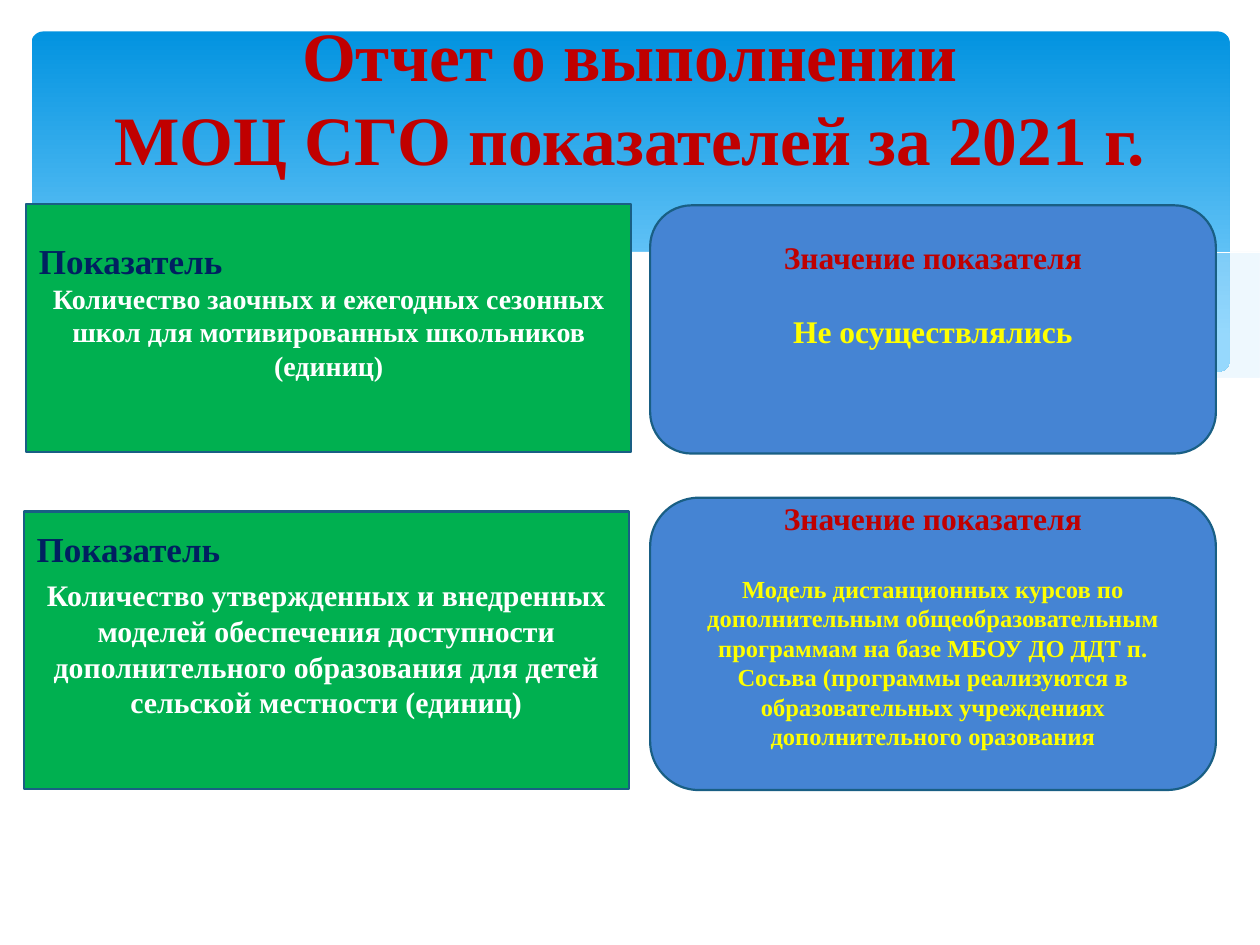
from pptx import Presentation
from pptx import util as u
from pptx.dml.color import RGBColor
from pptx.enum import shapes, text
from pptx.oxml.ns import qn

FONT = "Times New Roman"
COLORS = dict(sky="0293E0", pale="83D3FE", mist="C6E7FC", white="FFFFFF",
              red="C00000", navy="002060", yellow="FFFF00",
              green="00B050", blue="4584D3", edge="195F84")
TITLE = "Отчет о выполнении\vМОЦ СГО показателей за 2021 г."
LABEL, VALUE = "Показатель", "Значение показателя"
LEFT, CENTER = text.PP_ALIGN.LEFT, text.PP_ALIGN.CENTER
TOP, MIDDLE, BOTTOM = text.MSO_ANCHOR.TOP, text.MSO_ANCHOR.MIDDLE, text.MSO_ANCHOR.BOTTOM

# Each card: box, kind, anchor, (top, bottom) insets, heading size, body, body size, gap in points
CARDS = [
    ((0.21, 1.62, 4.8, 1.97), "indicator", TOP, (0.28, 0.05),
     "Количество заочных и ежегодных сезонных школ для мотивированных школьников (единиц)", 16, 0),
    ((5.16, 1.63, 4.49, 1.97), "value", TOP, (0.16, 0.05), "Не осуществлялись", 18, 21),
    ((5.16, 3.95, 4.49, 2.32), "value", BOTTOM, (0, 0.2),
     "Модель дистанционных курсов по дополнительным общеобразовательным программам "
     "на базе МБОУ ДО ДДТ п. Сосьва (программы реализуются в образовательных "
     "учреждениях дополнительного оразования", 14, 21),
    ((0.19, 4.06, 4.8, 2.2), "body", TOP, (0.13, 0.05),
     "Количество утвержденных и внедренных моделей обеспечения доступности "
     "дополнительного образования для детей сельской местности (единиц)", 17, 4),
]
# Each wave: smooth edges (joined into one outline), fill, opacity in percent
WAVES = [
    ([[(9.76, 2), (9.21, 2.1), (8.61, 2.23), (7.79, 2.42), (7.06, 2.57), (6.61, 2.65)],
      [(6.61, 2.65), (7.19, 2.72), (8.03, 2.78), (8.81, 2.73), (9.35, 2.62), (9.76, 2.47)]],
     "mist", 29),
    ([[(8.93, 2.73), (8.07, 2.6), (7.06, 2.4), (6.29, 2.22), (5.55, 2.05), (4.65, 1.91),
       (3.61, 1.85), (2.86, 1.91)],
      [(2.86, 1.91), (3.62, 2.03), (4.49, 2.22), (5.66, 2.48), (6.5, 2.64), (7.36, 2.75),
       (8.18, 2.78), (8.93, 2.73)]], "mist", 40),
    ([[(3.09, 1.95), (3.53, 1.89), (4.16, 1.87), (5.1, 1.92), (6.08, 2.04), (6.95, 2.19),
       (7.95, 2.41), (9.07, 2.72)]], None, 100),
    ([[(6.13, 2.57), (6.95, 2.35), (7.76, 2.16), (8.66, 1.99), (9.24, 1.9), (9.75, 1.85)]],
     None, 100),
    ([[(9.77, 2.46), (9.2, 2.65), (8.5, 2.75), (7.61, 2.75), (6.68, 2.65), (5.55, 2.45),
       (4.47, 2.2), (3.4, 1.97), (2.5, 1.86), (1.61, 1.84), (0.85, 1.93), (0.23, 2.13)],
      [(0.23, 3.29), (9.77, 3.29)]], "white", 100),
]


def rgb(name):
    return RGBColor.from_string(COLORS[name])


def place(s, box):
    s.left, s.top, s.width, s.height = map(u.Inches, box)


def smooth(points, steps=6):
    """Catmull-Rom curve through the points."""
    if len(points) < 3:
        return points
    ends = [points[0], *points, points[-1]]
    curve = []
    for a, b, c, d in zip(ends, ends[1:], ends[2:], ends[3:]):
        for t in (i / steps for i in range(steps)):
            curve.append(tuple(
                q + t * ((r - p) + t * ((2 * p - 5 * q + 4 * r - v) + t * (3 * q - p - 3 * r + v))) / 2
                for p, q, r, v in zip(a, b, c, d)))
    return curve + [points[-1]]


def add_wave(slide, edges, color, opacity):
    points = [pt for edge in edges for pt in smooth(edge)]
    builder = slide.shapes.build_freeform(*points[0], scale=u.Inches(1))
    builder.add_line_segments(points[1:], close=color is not None)
    s = builder.convert_to_shape()
    s.shadow.inherit = False
    if color is None:
        s.fill.background()
        s.line.color.rgb = rgb("white")
        s.line.width = u.Pt(0.25)
        return
    s.fill.solid()
    s.fill.fore_color.rgb = rgb(color)
    s.line.fill.background()
    if opacity < 100:
        clr = s.fill._xPr.find(qn("a:solidFill"))[0]
        clr.makeelement(qn("a:alpha"), {})
        alpha = clr.makeelement(qn("a:alpha"), {"val": str(opacity * 1000)})
        clr.append(alpha)


def write(p, words, size, color, align=CENTER, before=0):
    p_pr = p._p.get_or_add_pPr()
    p_pr.set("marL", "0")
    p_pr.set("indent", "0")
    p_pr.append(p_pr.makeelement(qn("a:buNone"), {}))
    p.alignment, p.space_before = align, u.Pt(before)
    p.text = words
    for r in p.runs:
        r.font.name, r.font.size, r.font.bold = FONT, u.Pt(size), True
        r.font.color.rgb = rgb(color)


def fill_card(s, kind, anchor, insets, body, size, gap):
    is_value = kind == "value"
    s.fill.solid()
    s.fill.fore_color.rgb = rgb("blue" if is_value else "green")
    s.line.color.rgb = rgb("edge")
    s.line.width = u.Pt(1.25)
    s.shadow.inherit = False
    tf = s.text_frame
    tf.word_wrap, tf.auto_size, tf.vertical_anchor = True, text.MSO_AUTO_SIZE.NONE, anchor
    tf.margin_top, tf.margin_bottom = map(u.Inches, insets)
    if is_value:
        write(tf.paragraphs[0], VALUE, 18, "red")
    else:
        write(tf.paragraphs[0], LABEL, 20, "navy", align=LEFT)
    write(tf.add_paragraph(), body, size, "yellow" if is_value else "white", before=gap)


def main():
    prs = Presentation()
    prs.slide_width, prs.slide_height = u.Inches(10), u.Inches(7.5)
    slide = prs.slides.add_slide(prs.slide_layouts[1])
    title, body_holder = slide.placeholders
    tree = slide.shapes._spTree

    sky = slide.shapes.add_shape(shapes.MSO_SHAPE.ROUNDED_RECTANGLE,
                                 *map(u.Inches, (0.25, 0.25, 9.51, 2.7)))
    sky.adjustments[0] = 0.034
    sky.shadow.inherit = False
    sky.line.fill.background()
    sky.fill.gradient()
    sky.fill.gradient_angle = 270
    for stop, (color, position) in zip(sky.fill.gradient_stops, (("sky", 0), ("pale", 0.9))):
        stop.color.rgb, stop.position = rgb(color), position
    for wave in WAVES:
        add_wave(slide, *wave)

    tree.append(title._element)  # bring in front of the waves
    place(title, (0.5, 0.37, 9, 0.78))
    tf = title.text_frame
    tf.word_wrap, tf.auto_size, tf.vertical_anchor = True, text.MSO_AUTO_SIZE.NONE, MIDDLE
    write(tf.paragraphs[0], TITLE, 39.6, "red")

    for box, kind, *content in CARDS:
        if kind == "body":
            s = body_holder
            tree.append(s._element)
            place(s, box)
        else:
            shape = "ROUNDED_RECTANGLE" if kind == "value" else "RECTANGLE"
            s = slide.shapes.add_shape(shapes.MSO_SHAPE[shape], *map(u.Inches, box))
        fill_card(s, kind, *content)
    prs.save("out.pptx")


if __name__ == "__main__":
    main()
